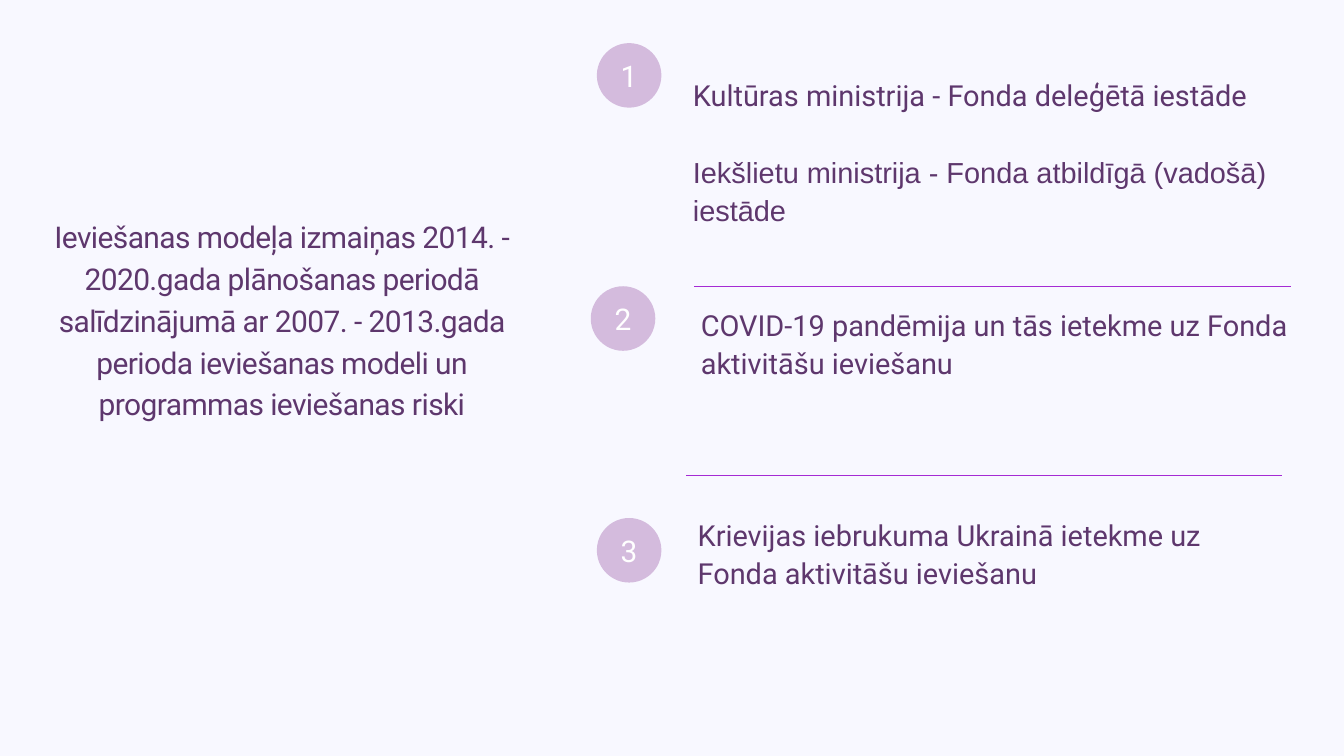
"""Build a slide on programme model changes and three numbered risk factors."""
from lxml import etree
from pptx import Presentation
from pptx.dml.color import RGBColor
from pptx.enum.shapes import MSO_CONNECTOR, MSO_SHAPE
from pptx.enum.text import MSO_ANCHOR, MSO_AUTO_SIZE, PP_ALIGN
from pptx.oxml.ns import qn
from pptx.util import Cm, Pt

OVAL, STRAIGHT = MSO_SHAPE.OVAL, MSO_CONNECTOR.STRAIGHT
LEFT, CENTER = PP_ALIGN.LEFT, PP_ALIGN.CENTER
TOP, MIDDLE = MSO_ANCHOR.TOP, MSO_ANCHOR.MIDDLE
GROW, FIXED = MSO_AUTO_SIZE.SHAPE_TO_FIT_TEXT, MSO_AUTO_SIZE.NONE

BACKGROUND, INK, LILAC, RULE, WHITE = "F8F8FF", "5E376D", "D4BBDD", "A52BD4", "FFFFFF"

TITLE = ("Ieviešanas modeļa izmaiņas 2014. - 2020.gada plānošanas periodā "
         "salīdzinājumā ar 2007. - 2013.gada perioda ieviešanas modeli un "
         "programmas ieviešanas riski")
ITEMS = [
    (26.19, 2.84, 1, "Roboto", "Kultūras ministrija - Fonda deleģētā iestāde"),
    (26.19, 5.74, 2, "Arial", "Iekšlietu ministrija - Fonda atbildīgā (vadošā) iestāde"),
    (26.49, 11.53, 2, "Roboto",
     "COVID-19 pandēmija un tās ietekme uz Fonda aktivitāšu ieviešanu"),
    (26.37, 19.46, 2, "Roboto",
     "Krievijas iebrukuma Ukrainā ietekme uz Fonda aktivitāšu ieviešanu"),
]
BADGES = [(22.56, 1.63), (22.33, 10.82), (22.56, 19.58)]
RULES = [(25.93, 17.98), (26.24, 10.82)]
ITEM_WIDTH, LINE_HEIGHT, RULE_WIDTH, BADGE_SIZE = 22.3, 1.41, 22.54, 2.44


def rgb(color):
    return RGBColor.from_string(color)


def add_text(shapes, box, text, size, spacing, font="Roboto", color=INK, align=LEFT,
             anchor=TOP, inset=0, tracking=0, fit=GROW):
    tf = shapes.add_textbox(*map(Cm, box)).text_frame
    tf.word_wrap = True
    tf.auto_size = fit
    tf.vertical_anchor = anchor
    tf.margin_left = tf.margin_right = tf.margin_top = tf.margin_bottom = Cm(inset)
    p = tf.paragraphs[0]
    p.alignment = align
    p.line_spacing = Pt(spacing)
    p.font.name, p.font.size = font, Pt(size)
    p.font.color.rgb = rgb(color)
    r = p.add_run()
    r.text = text
    if tracking:
        r._r.get_or_add_rPr().set("spc", str(tracking))


def add_rule(shapes, x, y):
    s = shapes.add_connector(STRAIGHT, Cm(x), Cm(y), Cm(x + RULE_WIDTH), Cm(y))
    s.line.color.rgb = rgb(RULE)
    s.line.width = Pt(0.75)
    etree.SubElement(s._element.spPr, qn("a:effectLst"))


def add_badge(shapes, x, y, number):
    group = shapes.add_group_shape().shapes
    sp = group.add_shape(OVAL, Cm(x), Cm(y), Cm(BADGE_SIZE), Cm(BADGE_SIZE))
    sp.shadow.inherit = False
    sp.fill.solid()
    sp.fill.fore_color.rgb = rgb(LILAC)
    sp.line.fill.background()
    add_text(group, (x + 0.23, y - 0.06, 1.98, 2.26), str(number), 32, 48, color=WHITE,
             align=CENTER, anchor=MIDDLE, inset=0.15, tracking=100, fit=FIXED)


def main():
    prs = Presentation()
    prs.slide_width, prs.slide_height = Cm(50.8), Cm(28.575)
    slide = prs.slides.add_slide(prs.slide_layouts[6])
    slide.background.fill.solid()
    slide.background.fill.fore_color.rgb = rgb(BACKGROUND)
    shapes = slide.shapes
    for x, y in RULES:
        add_rule(shapes, x, y)
    add_text(shapes, (0.89, 8.03, 19.53, 7.85), TITLE, 32.1, 44.9, align=CENTER, tracking=-60)
    for x, y, lines, font, text in ITEMS:
        add_text(shapes, (x, y, ITEM_WIDTH, lines * LINE_HEIGHT), text, 31, 40.2, font)
    for number, (x, y) in enumerate(BADGES, 1):
        add_badge(shapes, x, y, number)
    prs.save("out.pptx")


if __name__ == "__main__":
    main()
